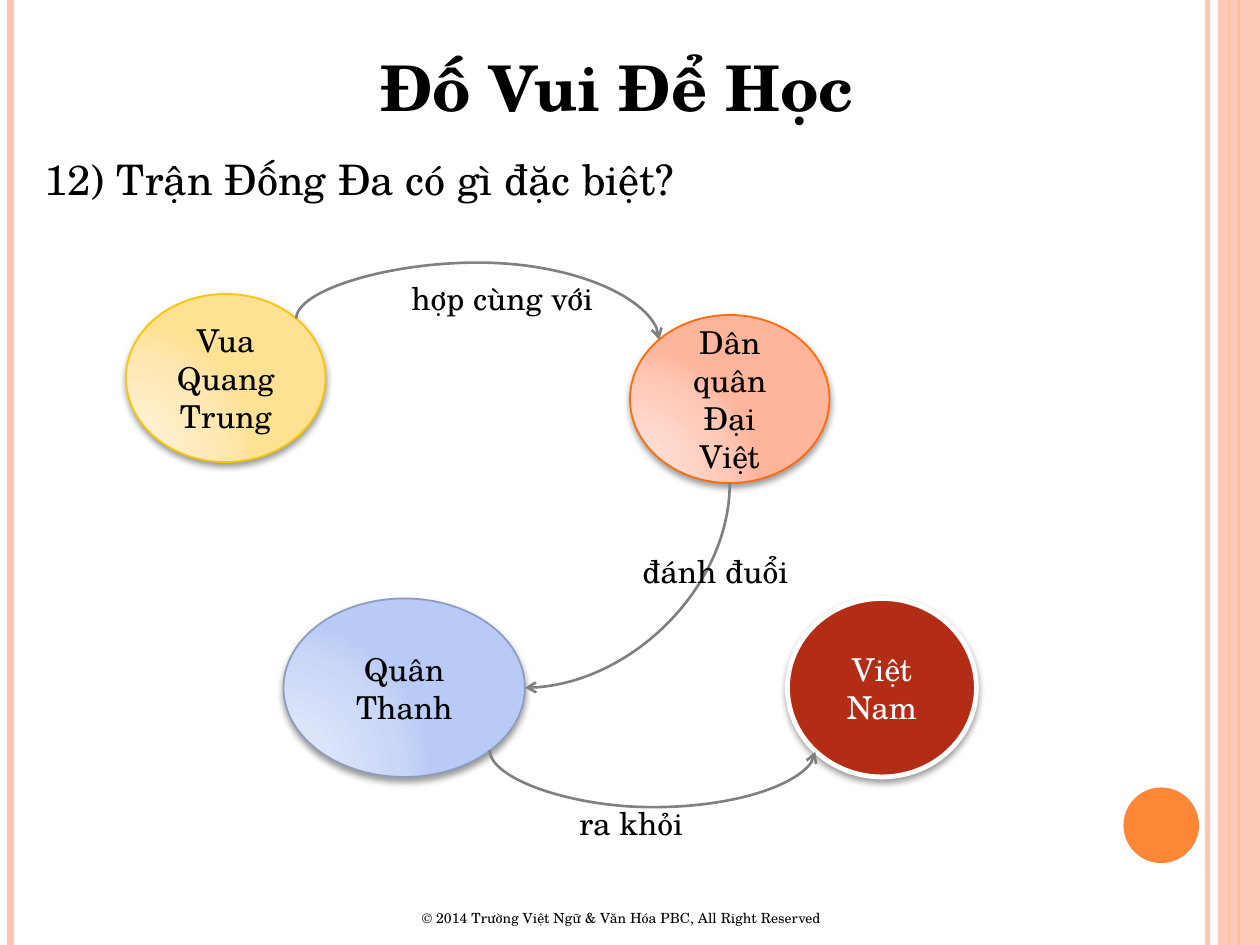
"""Build a quiz slide: who fought whom at the battle of Đống Đa."""
import math
import pptx
import pptx.util
import pptx.oxml
import pptx.oxml.ns
import pptx.dml.color
import pptx.enum.shapes
import pptx.enum.text

Pt = pptx.util.Pt
SHAPE = pptx.enum.shapes.MSO_SHAPE
CURVE = pptx.enum.shapes.MSO_CONNECTOR.CURVE
LINE = pptx.enum.shapes.MSO_CONNECTOR.STRAIGHT
ALIGN = pptx.enum.text.PP_ALIGN
ANCHOR = pptx.enum.text.MSO_ANCHOR
FIT = pptx.enum.text.MSO_AUTO_SIZE
FONT = "TeX Gyre Schola"
WIDE, HIGH = 720, 540

HUE = {
    "black": "000000", "white": "FFFFFF", "gray": "808080",
    "peach": "FEC3AE", "orange": "FE8637", "red": "B32C16",
    "gold": "F8C700", "coral": "FF6B0A", "blue": "8D9CBF",
}
FADE = {
    "gold": ("FFF0D1", "FFEFCC", "FFE7B1", "FFE193"),
    "coral": ("FFDED5", "FFDBD0", "FFC8B6", "FFB59B"),
    "blue": ("DEE6FA", "DBE4F9", "CAD7F7", "B8CAF5"),
}
STOPS = (0, 30, 75, 100)

TITLE = ("Đố Vui Để Học", (210, 24, 294, 51))
QUERY = ("12) Trận Đống Đa có gì đặc biệt?", (18, 84, 672, 65))
FOOT = ("© 2014 Trường Việt Ngữ & Văn Hóa PBC, All Right Reserved",
        (234, 516, 264, 17))
RAILS = [(690, "peach", 3, 93), (6, "peach", 4.5, 100),
         (708, "orange", 1.5, 100), (702, "orange", 0.75, 100)]
BAND = (696, 0, 24, HIGH)
DOT = (642, 450, 43.2, 43.2)
NODES = {
    "king": ("Vua Quang Trung", (72, 168, 114, 96), "gold"),
    "army": ("Dân quân Đại Việt", (360, 180, 114, 96), "coral"),
    "foe": ("Quân Thanh", (162, 342, 138, 102), "blue"),
    "land": ("Việt Nam", (450, 342, 108, 102), "red"),
}
LINKS = [
    ("king", 315, "army", 225, 150, "hợp cùng với", (228, 156, 121, 29)),
    ("army", 90, "foe", 0, None, "đánh đuổi", (360, 312, 99, 29)),
    ("foe", 45, "land", 135, 461.5, "ra khỏi", (324, 456, 74, 29)),
]


def rgb(name):
    return pptx.dml.color.RGBColor.from_string(HUE[name])


def node(xml):
    head, rest = xml.split(">", 1)
    end = "/" if head.endswith("/") else ""
    head = head.rstrip("/")
    return pptx.oxml.parse_xml(
        f"{head} {pptx.oxml.ns.nsdecls('a')}{end}>{rest}")


def place(shape, box):
    shape.left, shape.top, shape.width, shape.height = map(Pt, box)


def say(shape, text, size=18, color="black", bold=False, align=ALIGN.LEFT,
        anchor=ANCHOR.TOP, wrap=True):
    frame = shape.text_frame
    frame.auto_size = FIT.NONE
    frame.word_wrap = wrap
    frame.vertical_anchor = anchor
    para = frame.paragraphs[0]
    para.alignment = align
    para.space_before = Pt(0)
    run = para.add_run()
    run.text = text
    font = run.font
    font.name, font.size, font.bold = FONT, Pt(size), bold
    font.color.rgb = rgb(color)


def label(slide, text, box, **form):
    say(slide.shapes.add_textbox(*map(Pt, box)), text, **form)


def shape(slide, kind, box, color):
    item = slide.shapes.add_shape(kind, *map(Pt, box))
    item.shadow.inherit = False
    item.fill.solid()
    item.fill.fore_color.rgb = rgb(color)
    item.line.fill.background()
    return item


def clear(fill, part):
    for tint in fill.iter(pptx.oxml.ns.qn("a:srgbClr")):
        tint.append(node(f'<a:alpha val="{part * 1000}"/>'))


def wire(slide, kind, start, end, color, width):
    item = slide.shapes.add_connector(kind, *map(Pt, start + end))
    item.line.color.rgb = rgb(color)
    item.line.width = Pt(width)
    item._element.spPr.append(node("<a:effectLst/>"))
    return item


def frame(slide):
    for x, color, width, part in RAILS:
        rail = wire(slide, LINE, (x, 0), (x, HIGH), color, width)
        if part < 100:
            clear(rail.line._ln, part)
    band = shape(slide, SHAPE.RECTANGLE, BAND, "peach")
    clear(band._element.spPr, 87)
    shape(slide, SHAPE.OVAL, DOT, "orange")


def bubble(slide, text, box, color):
    item = shape(slide, SHAPE.OVAL, box, color)
    props = item._element.spPr
    soft = color in FADE
    item.line.color.rgb = rgb(color if soft else "white")
    item.line.width = Pt(1 if soft else 2.75)
    if soft:
        stops = "".join(
            f'<a:gs pos="{at * 1000}"><a:srgbClr val="{tint}"/></a:gs>'
            for at, tint in zip(STOPS, FADE[color]))
        old = props.find(pptx.oxml.ns.qn("a:solidFill"))
        props.replace(old, node(
            f'<a:gradFill rotWithShape="1"><a:gsLst>{stops}</a:gsLst>'
            '<a:path path="circle"><a:fillToRect l="5000" t="100000" '
            'r="120000" b="10000"/></a:path></a:gradFill>'))
    props.find(pptx.oxml.ns.qn("a:effectLst")).append(node(
        f'<a:outerShdw blurRad="{Pt(4)}" dist="{Pt(2)}" dir="5400000" '
        'rotWithShape="0"><a:srgbClr val="000000"><a:alpha val="40000"/>'
        '</a:srgbClr></a:outerShdw>'))
    say(item, text, color="black" if soft else "white",
        align=ALIGN.CENTER, anchor=ANCHOR.MIDDLE)


def rim(name, angle):
    x, y, w, h = NODES[name][1]
    turn = math.radians(angle)
    return (x + w / 2 * (1 + math.cos(turn)),
            y + h / 2 * (1 + math.sin(turn)))


def bend(slide, start, end, crest):
    (x1, y1), (x2, y2) = start, end
    w, h = abs(y2 - y1) or 1, abs(x2 - x1)
    x, y = (x1 + x2) / 2, (y1 + y2) / 2
    if crest:
        w = max(w, 1)
    item = wire(slide, CURVE, (x - w / 2, y - h / 2),
                (x + w / 2, y + h / 2), "gray", 1.5)
    item.line._ln.append(node('<a:tailEnd type="arrow"/>'))
    props = item._element.spPr
    form = props.find(pptx.oxml.ns.qn("a:xfrm"))
    shell = props.find(pptx.oxml.ns.qn("a:prstGeom"))
    if crest is None:
        form.set("rot", str(90 * 60000))
        shell.set("prst", "curvedConnector2")
        return
    form.set("rot", str(270 * 60000))
    form.set("flipH", "1")
    for old in list(shell):
        shell.remove(old)
    ratio = round((crest - y + w / 2) / w * 100000)
    shell.append(node(
        f'<a:avLst><a:gd name="adj1" fmla="val {ratio}"/></a:avLst>'))


def main():
    deck = pptx.Presentation()
    deck.slide_width, deck.slide_height = Pt(WIDE), Pt(HIGH)
    slide = deck.slides.add_slide(deck.slide_layouts[1])
    title, body = slide.placeholders
    place(title, TITLE[1])
    say(title, TITLE[0], size=36, bold=True)
    place(body, QUERY[1])
    say(body, QUERY[0], size=24)
    props = body.text_frame.paragraphs[0]._p.get_or_add_pPr()
    props.set("marL", "0")
    props.set("indent", "0")
    props.append(node("<a:buNone/>"))
    frame(slide)
    label(slide, *FOOT, size=8)
    for item in NODES.values():
        bubble(slide, *item)
    for one, out, two, into, crest, text, box in LINKS:
        bend(slide, rim(one, out), rim(two, into), crest)
        label(slide, text, box, wrap=False)
    deck.save("out.pptx")


if __name__ == "__main__":
    main()
